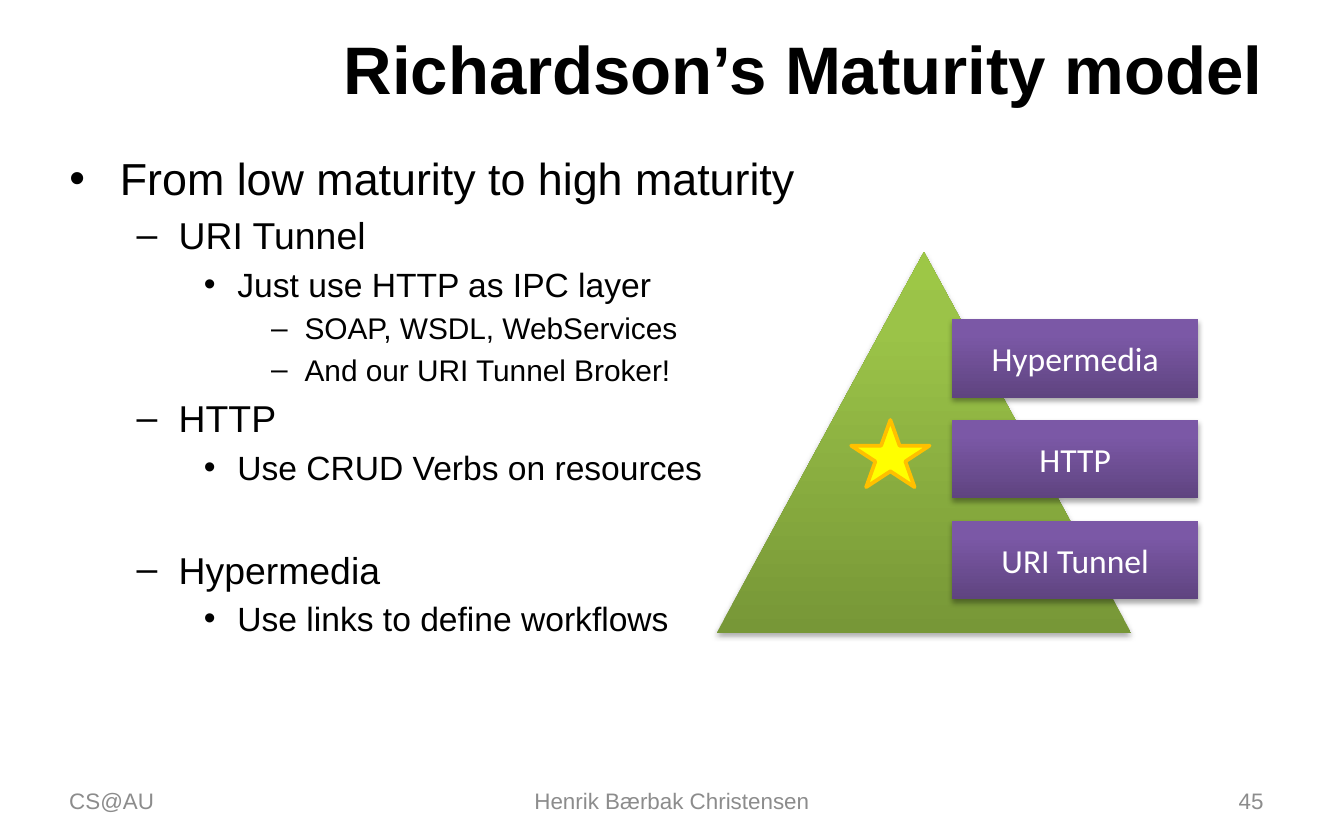
from copy import deepcopy

from lxml import etree
from pptx import Presentation
from pptx.dml.color import RGBColor
from pptx.enum.shapes import MSO_SHAPE
from pptx.enum.text import MSO_ANCHOR, MSO_AUTO_SIZE, PP_ALIGN
from pptx.oxml.ns import qn
from pptx.util import Pt

PX = 9525
LEFT, CENTER, RIGHT = PP_ALIGN.LEFT, PP_ALIGN.CENTER, PP_ALIGN.RIGHT
MIDDLE = MSO_ANCHOR.MIDDLE
NO_FIT = MSO_AUTO_SIZE.NONE
RECT, STAR = MSO_SHAPE.RECTANGLE, MSO_SHAPE.STAR_5_POINT
TRIANGLE = MSO_SHAPE.ISOSCELES_TRIANGLE

COLORS = {
    "ink": "000000", "muted": "8C8C8C", "white": "FFFFFF",
    "star": "FFFF00", "edge": "FFC000",
}
GREEN = [(0, "779737"), (0.8, "9BC348"), (1, "9DC746")]
PURPLE = [(0, "5F4480"), (0.8, "7B58A6"), (1, "7C57A8")]

LEVELS = [(24, 36, 36), (20, 78, 30), (18, 120, 24), (16, 168, 24)]
POINTS = [
    (0, "From low maturity to high maturity", 0),
    (1, "URI Tunnel", None),
    (2, "Just use HTTP as IPC layer", None),
    (3, "SOAP, WSDL, WebServices", None),
    (3, "And our URI Tunnel Broker!", None),
    (1, "HTTP", None),
    (2, "Use CRUD Verbs on resources", None),
    (1, "Hypermedia", 32),
    (2, "Use links to define workflows", None),
]
STAGES = ["Hypermedia", "HTTP", "URI Tunnel"]


def rgb(name):
    return RGBColor.from_string(COLORS.get(name, name))


def scale(*box):
    return [n * PX for n in box]


def place(shape, box):
    shape.left, shape.top, shape.width, shape.height = scale(*box)


def write(para, text, size=12, color="ink", font="Arial", bold=False, align=LEFT):
    para.text = text
    para.alignment = align
    para.font.size = Pt(size)
    para.font.name = font
    para.font.bold = bold
    para.font.color.rgb = rgb(color)


def shade(shape, stops):
    shape.fill.gradient()
    shape.fill.gradient_angle = 90
    items = shape.element.spPr.find(".//" + qn("a:gsLst"))
    items.append(deepcopy(items[0]))
    for stop, (pos, color) in zip(shape.fill.gradient_stops, stops):
        stop.position = pos
        stop.color.rgb = rgb(color)


def drop(shape):
    effects = shape.element.spPr.find(qn("a:effectLst"))
    outer = etree.SubElement(
        effects, qn("a:outerShdw"), blurRad=str(Pt(3.1)), dist=str(Pt(1.8)),
        dir="5400000", rotWithShape="0")
    color = etree.SubElement(outer, qn("a:srgbClr"), val=COLORS["ink"])
    etree.SubElement(color, qn("a:alpha"), val="35000")


def block(slide, kind, box, stops):
    shape = slide.shapes.add_shape(kind, *scale(*box))
    shape.shadow.inherit = False
    shape.line.fill.background()
    shade(shape, stops)
    drop(shape)
    return shape


def title(slide, box):
    shape = slide.shapes.title
    place(shape, box)
    shape.text_frame.auto_size = NO_FIT
    shape.text_frame.vertical_anchor = MIDDLE
    write(shape.text_frame.paragraphs[0], "Richardson’s Maturity model",
          size=36, bold=True, align=RIGHT)


def outline(slide, box):
    shape = slide.placeholders[1]
    place(shape, box)
    frame = shape.text_frame
    frame.auto_size = NO_FIT
    for i, (level, text, gap) in enumerate(POINTS):
        para = frame.add_paragraph() if i else frame.paragraphs[0]
        size, margin, hang = LEVELS[level]
        para.level = level
        props = para._p.get_or_add_pPr()
        props.set("marL", str(margin * PX))
        props.set("indent", str(-hang * PX))
        write(para, text, size=size)
        if gap is not None:
            para.space_before = Pt(gap)


def footer(slide, box):
    x, y, w, h = box
    parts = [
        (0, 224, "CS@AU", LEFT),
        (288, 304, "Henrik Bærbak Christensen", CENTER),
        (w - 224, 224, "45", RIGHT),
    ]
    for dx, wide, text, align in parts:
        label = slide.shapes.add_textbox(*scale(x + dx, y, wide, h))
        label.text_frame.word_wrap = True
        label.text_frame.vertical_anchor = MIDDLE
        write(label.text_frame.paragraphs[0], text, color="muted", align=align)


def pyramid(slide, box):
    x, y, w, h = box
    block(slide, TRIANGLE, (x, y, 296, h), GREEN)
    for i, text in reversed(list(enumerate(STAGES))):
        stage = block(slide, RECT, (x + w - 176, y + 48 + 72 * i, 176, 56), PURPLE)
        stage.text_frame.vertical_anchor = MIDDLE
        write(stage.text_frame.paragraphs[0], text, size=18, color="white",
              font="Calibri", align=CENTER)
    star = slide.shapes.add_shape(STAR, *scale(x + 96, y + 120, 56, 48))
    star.shadow.inherit = False
    star.fill.solid()
    star.fill.fore_color.rgb = rgb("star")
    star.line.color.rgb = rgb("edge")
    star.line.width = Pt(2)


def main():
    deck = Presentation()
    deck.slide_width, deck.slide_height = scale(960, 600)
    slide = deck.slides.add_slide(deck.slide_layouts[1])
    title(slide, (48, 17, 864, 62))
    outline(slide, (40, 103, 872, 450))
    footer(slide, (40, 556, 872, 32))
    pyramid(slide, (512, 180, 344, 272))
    deck.save("out.pptx")


if __name__ == "__main__":
    main()
